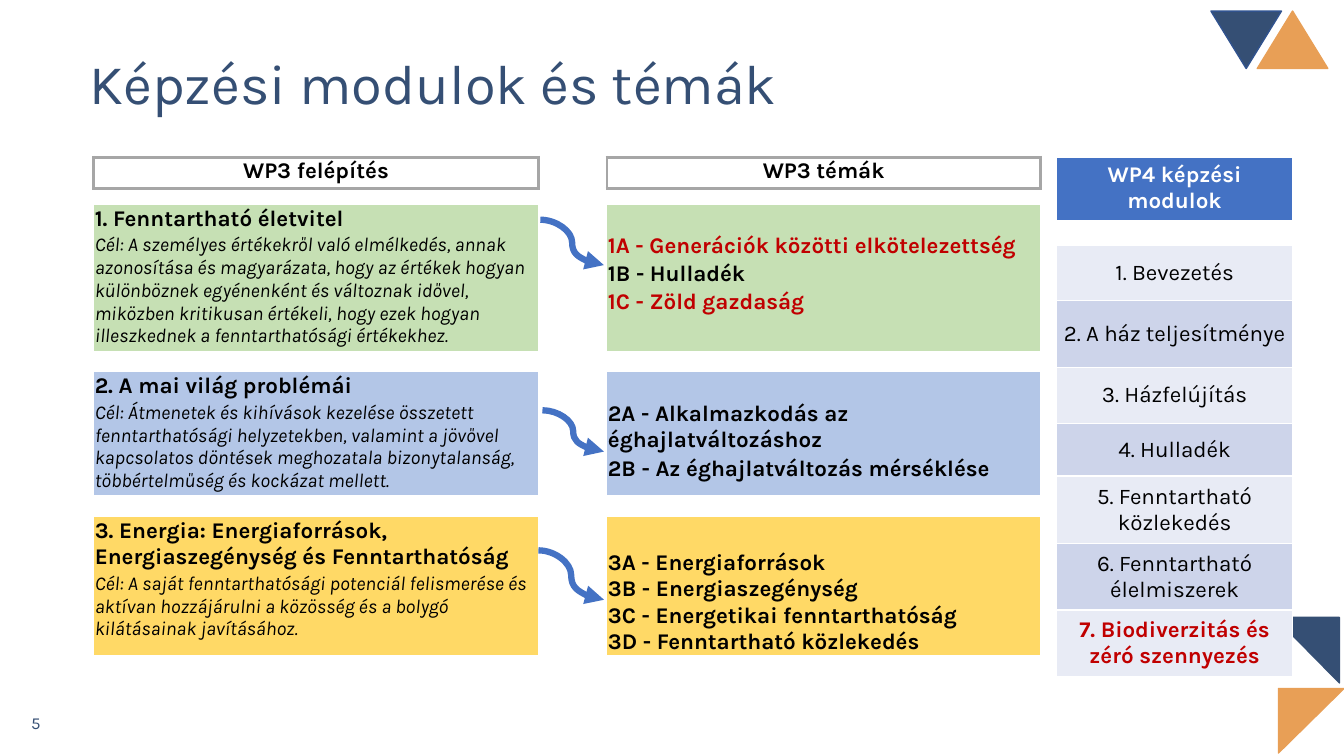
import pptx
import pptx.util
import pptx.dml.color
import pptx.enum.shapes
import pptx.enum.text
import pptx.oxml
import pptx.oxml.ns
from lxml import etree

Inches = pptx.util.Inches
Pt = pptx.util.Pt
Align = pptx.enum.text.PP_ALIGN
Anchor = pptx.enum.text.MSO_ANCHOR
qualify = pptx.oxml.ns.qn

NAVY, ORANGE, BLUE = "354F74", "E89F56", "4472C4"
GREEN, SKY, YELLOW = "C6E0B4", "B3C6E7", "FFD966"
BLACK, RED, GRAY, WHITE = "000000", "C00000", "A6A6A6", "FFFFFF"
PLAIN_STYLE = "{2D5ABB26-0587-4C30-8999-92F81FD0307C}"


def color(value):
    return pptx.dml.color.RGBColor.from_string(value)


def write(frame, *lines, size=16, ink=BLACK, bold=False, italic=False,
          align=Align.LEFT, spacing=None):
    """Put one paragraph per line into a text frame."""
    for index, line in enumerate(lines):
        para = frame.add_paragraph() if index else frame.paragraphs[0]
        para.alignment = align
        if spacing:
            para.line_spacing = spacing
        span = para.add_run()
        span.text = line
        span.font.name = "Karla"
        span.font.size = Pt(size)
        span.font.bold = bold
        span.font.italic = italic
        span.font.color.rgb = color(ink)


class Slide:
    def __init__(self, page):
        self.page = page

    def text(self, left, top, width, height, line, **style):
        box = self.page.shapes.add_textbox(
            Inches(left), Inches(top), Inches(width), Inches(height))
        box.text_frame.word_wrap = True
        box.text_frame.vertical_anchor = Anchor.MIDDLE
        write(box.text_frame, line, **style)

    def triangle(self, left, top, width, height, fill, line, rotation=0, tip=0.5):
        shape = self.page.shapes.add_shape(
            pptx.enum.shapes.MSO_SHAPE.ISOSCELES_TRIANGLE,
            Inches(left), Inches(top), Inches(width), Inches(height))
        shape.adjustments[0] = tip
        shape.rotation = rotation
        shape.shadow.inherit = False
        shape.fill.solid()
        shape.fill.fore_color.rgb = color(fill)
        shape.line.color.rgb = color(line)
        shape.line.width = Pt(1)

    def arrow(self, left, top, right, bottom):
        curve = self.page.shapes.add_connector(
            pptx.enum.shapes.MSO_CONNECTOR.CURVE,
            Inches(left), Inches(top), Inches(right), Inches(bottom))
        curve.line.color.rgb = color(BLUE)
        curve.line.width = Pt(4.5)
        outline = curve.line._get_or_add_ln()
        etree.SubElement(outline, qualify("a:tailEnd"), type="triangle")
        etree.SubElement(curve._element.spPr, qualify("a:effectLst"))

    def table(self, left, top, widths, heights):
        frame = self.page.shapes.add_table(
            len(heights), len(widths), Inches(left), Inches(top),
            Inches(sum(widths)), Inches(sum(heights)))
        table = frame.table
        table.first_row = table.horz_banding = False
        table._tbl.tblPr.find(qualify("a:tableStyleId")).text = PLAIN_STYLE
        for column, width in zip(table.columns, widths):
            column.width = Inches(width)
        for row, height in zip(table.rows, heights):
            row.height = Inches(height)
        return table

    def cell(self, cell, *lines, fill=None, border=None, weight=1,
             margins=(0.01, 0.01, 0.01, 0), anchor=Anchor.TOP, **style):
        (cell.margin_left, cell.margin_top,
         cell.margin_right, cell.margin_bottom) = map(Inches, margins)
        cell.vertical_anchor = anchor
        if border:
            for side in "LRTB":
                edge = etree.SubElement(cell._tc.get_or_add_tcPr(),
                                        qualify(f"a:ln{side}"), w=str(Pt(weight)))
                paint = etree.SubElement(edge, qualify("a:solidFill"))
                etree.SubElement(paint, qualify("a:srgbClr"), val=border)
        if fill:
            cell.fill.solid()
            cell.fill.fore_color.rgb = color(fill)
        else:
            cell.fill.background()
        if lines:
            write(cell.text_frame, *lines, **style)
        else:  # a small empty paragraph keeps the row low
            para = cell.text_frame.paragraphs[0]._p
            etree.SubElement(para, qualify("a:endParaRPr"), sz="600")


def draw_structure(slide):
    heights = [0.31, 0.16, 0.27, 0.27, 0.27, 0.6, 0.21,
               0.27, 0.54, 0.38, 0.21, 0.53, 0.83]
    table = slide.table(0.93, 1.56, [4.41, 0.68, 4.3], heights)
    fills = {row: fill for rows, fill in ((range(2, 6), GREEN), (range(7, 10), SKY),
                                          (range(11, 13), YELLOW)) for row in rows}
    headings = {
        2: "1. Fenntartható életvitel",
        7: "2. A mai világ problémái",
        11: "3. Energia: Energiaforrások, Energiaszegénység és Fenntarthatóság",
    }
    goals = {
        3: "Cél: A személyes értékekről való elmélkedés, annak azonosítása és "
           "magyarázata, hogy az értékek hogyan különböznek egyénenként és "
           "változnak idővel, miközben kritikusan értékeli, hogy ezek hogyan "
           "illeszkednek a fenntarthatósági értékekhez.",
        8: "Cél: Átmenetek és kihívások kezelése összetett fenntarthatósági "
           "helyzetekben, valamint a jövővel kapcsolatos döntések meghozatala "
           "bizonytalanság, többértelműség és kockázat mellett.",
        12: "Cél: A saját fenntarthatósági potenciál felismerése és aktívan "
            "hozzájárulni a közösség és a bolygó kilátásainak javításához.",
    }
    topics = {
        3: ["1A - Generációk közötti elkötelezettség"],
        4: ["1B - Hulladék"],
        5: ["1C - Zöld gazdaság"],
        8: ["2A - Alkalmazkodás az éghajlatváltozáshoz"],
        9: ["2B - Az éghajlatváltozás mérséklése"],
        11: ["3A - Energiaforrások", "3B - Energiaszegénység",
             "3C - Energetikai fenntarthatóság", "3D - Fenntartható közlekedés"],
    }
    for first, last, column in ((3, 5, 0), (8, 9, 0), (11, 12, 2)):
        table.cell(first, column).merge(table.cell(last, column))

    for column, heading in ((0, "WP3 felépítés"), (2, "WP3 témák")):
        slide.cell(table.cell(0, column), heading, border=GRAY, weight=2.25,
                   bold=True, align=Align.CENTER)
    for row in range(len(heights)):
        slide.cell(table.cell(row, 1))
        if row == 0:
            continue
        fill = fills.get(row)
        if row in goals:
            slide.cell(table.cell(row, 0), goals[row], fill=fill, size=14, italic=True)
        else:
            lines = [headings[row]] if row in headings else []
            slide.cell(table.cell(row, 0), *lines, fill=fill, bold=True)
        slide.cell(table.cell(row, 2), *topics.get(row, []), fill=fill, bold=True,
                   ink=RED if row in (3, 5) else BLACK,
                   anchor=Anchor.BOTTOM if row == 11 else Anchor.TOP)


def draw_modules(slide):
    modules = ["1. Bevezetés", "2. A ház teljesítménye", "3. Házfelújítás",
               "4. Hulladék", "5. Fenntartható közlekedés",
               "6. Fenntartható élelmiszerek", "7. Biodiverzitás és zéró szennyezés"]
    table = slide.table(10.48, 1.56, [2.34],
                        [0.6, 0.24, 0.55, 0.66, 0.56, 0.52, 0.67, 0.66, 0.66])
    slide.cell(table.cell(0, 0), "WP4 képzési modulok", fill=BLUE, border=WHITE,
               margins=(0.1, 0.05, 0.1, 0.05), ink=WHITE, bold=True, align=Align.CENTER)
    slide.cell(table.cell(1, 0), fill=WHITE, border=WHITE)
    for index, module in enumerate(modules):
        last = index == len(modules) - 1
        slide.cell(table.cell(index + 2, 0), module, border=WHITE,
                   fill="CDD4EA" if index % 2 else "E8EBF5",
                   margins=(0.03, 0.02, 0.03, 0.02), anchor=Anchor.MIDDLE,
                   align=Align.CENTER, bold=last, ink=RED if last else BLACK)


def main():
    deck = pptx.Presentation()
    deck.slide_width, deck.slide_height = Inches(13.33), Inches(7.5)
    slide = Slide(deck.slides.add_slide(deck.slide_layouts[6]))

    # Page number and corner triangles
    slide.text(0.21, 6.97, 3, 0.4, "5", size=12, ink=NAVY)
    slide.triangle(12.47, 0.11, 0.7, 0.57, ORANGE, ORANGE)
    slide.triangle(12.68, 6.83, 0.65, 0.64, ORANGE, ORANGE, rotation=180, tip=1)
    slide.triangle(12.64, 6.13, 0.65, 0.64, NAVY, NAVY, rotation=270, tip=1)
    slide.triangle(12.01, 0.11, 0.7, 0.57, NAVY, "31538F", rotation=180)

    # Title
    slide.text(0.79, 0.13, 11.5, 1.45, "Képzési modulok és témák",
               size=40, ink=NAVY, spacing=0.9)

    # Structure and topics, joined by arrows
    draw_structure(slide)
    for left, top, bottom in ((5.36, 2.18, 2.63), (5.38, 4.07, 4.48), (5.34, 5.46, 5.95)):
        slide.arrow(left, top, 5.99, bottom)

    # Training modules
    draw_modules(slide)
    deck.save("out.pptx")


if __name__ == "__main__":
    main()
